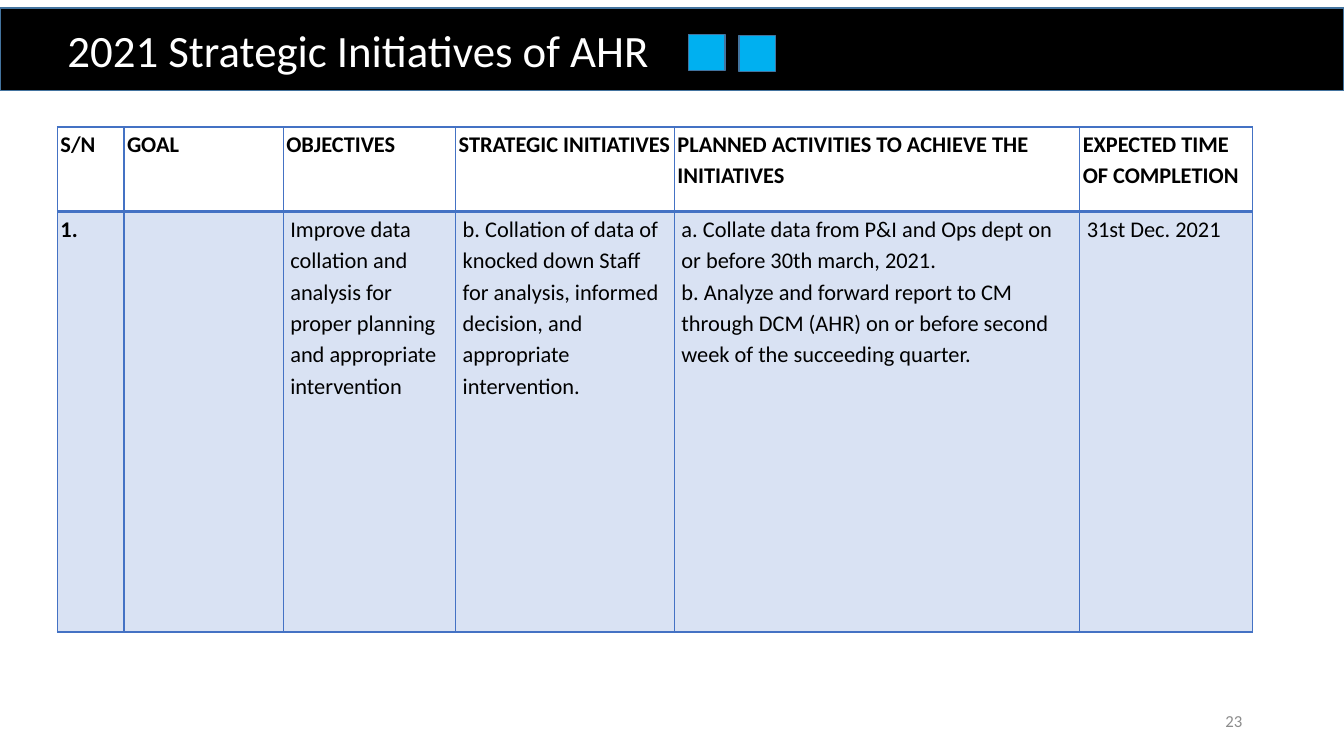
from dataclasses import dataclass

from lxml.etree import SubElement
from pptx import Presentation
from pptx.dml.color import RGBColor
from pptx.enum.shapes import MSO_SHAPE
from pptx.enum.text import MSO_ANCHOR, PP_ALIGN
from pptx.oxml.ns import qn
from pptx.util import Inches, Pt


@dataclass(frozen=True)
class Theme:
    font: str = "Calibri"
    title_size: int = 32
    table_size: int = 16
    number_size: int = 12
    black: str = "000000"
    white: str = "FFFFFF"
    grey: str = "8C8C8C"
    cyan: str = "00B0F0"
    outline: str = "43739E"
    grid: str = "4472C4"
    tint_percent: int = 20


THEME = Theme()
SLIDE_W, SLIDE_H = 13.33, 7.5
COLUMNS = [0.66, 1.58, 1.71, 2.17, 4.02, 1.71]
ROWS = [0.84, 4.17]
HEADINGS = [
    "S/N", "GOAL", "OBJECTIVES", "STRATEGIC INITIATIVES",
    "PLANNED ACTIVITIES TO ACHIEVE THE INITIATIVES",
    "EXPECTED TIME OF COMPLETION",
]
INITIATIVE = [
    "1.",
    "",
    "Improve data collation and analysis for proper planning and appropriate intervention",
    "b. Collation of data of knocked down Staff for analysis, informed decision, "
    "and appropriate intervention.",
    "a. Collate data from P&I and Ops dept on or before 30th march, 2021.\n"
    "b. Analyze and forward report to CM through DCM (AHR) on or before second "
    "week of the succeeding quarter.",
    "31st Dec. 2021",
]


def add_run(p, text, size, color, bold=False):
    r = p.add_run()
    r.text = text
    r.font.name, r.font.size, r.font.bold = THEME.font, Pt(size), bold
    r.font.color.rgb = RGBColor.from_string(color)


def add_rect(s, x, y, w, h, color):
    sp = s.shapes.add_shape(MSO_SHAPE.RECTANGLE, *map(Inches, (x, y, w, h)))
    sp.shadow.inherit = False
    sp.fill.solid()
    sp.fill.fore_color.rgb = RGBColor.from_string(color)
    sp.line.color.rgb = RGBColor.from_string(THEME.outline)
    sp.line.width = Pt(1)


def add_label(s, x, y, w, h, text, size, color, align=PP_ALIGN.LEFT):
    tf = s.shapes.add_textbox(*map(Inches, (x, y, w, h))).text_frame
    tf.word_wrap = True
    tf.vertical_anchor = MSO_ANCHOR.MIDDLE
    p = tf.paragraphs[0]
    p.alignment = align
    add_run(p, text, size, color)


def title_band(s, x, y, w, h):
    add_rect(s, x, y, w, h, THEME.black)
    add_label(s, x + 0.57, y + 0.09, w - 1.14, 0.64,
              "2021 Strategic Initiatives of AHR", THEME.title_size, THEME.white)


def title_squares(s, x, y, side):
    for i in range(2):
        add_rect(s, x + 0.5 * i, y + 0.01 * i, side, side, THEME.cyan)


def set_borders(cell, bottom):
    tc_pr = cell._tc.get_or_add_tcPr()
    for edge, width in zip("LRTB", (1, 1, 1, bottom)):
        ln = SubElement(tc_pr, qn(f"a:ln{edge}"), w=str(Pt(width)))
        fill = SubElement(ln, qn("a:solidFill"))
        SubElement(fill, qn("a:srgbClr"), val=THEME.grid)


def tint(cell):
    cell.fill.solid()
    cell.fill.fore_color.rgb = RGBColor.from_string(THEME.grid)
    color = cell._tc.tcPr.find(qn("a:solidFill")).find(qn("a:srgbClr"))
    SubElement(color, qn("a:alpha"), val=str(THEME.tint_percent * 1000))


def fill_cell(cell, text, heading, bold):
    cell.margin_left = cell.margin_right = Inches(0.03 if bold else 0.07)
    cell.margin_top = cell.margin_bottom = 0
    set_borders(cell, bottom=2 if heading else 1)
    if heading:
        cell.fill.background()
    else:
        tint(cell)
    tf = cell.text_frame
    for i, line in enumerate(text.split("\n") if text else []):
        p = tf.add_paragraph() if i else tf.paragraphs[0]
        p.line_spacing = 1.15
        add_run(p, line, THEME.table_size, THEME.black, bold)


def initiatives_table(s, x, y):
    table = s.shapes.add_table(
        len(ROWS), len(COLUMNS),
        *map(Inches, (x, y, sum(COLUMNS), sum(ROWS)))).table
    table.first_row = table.horz_banding = False
    for column, width in zip(table.columns, COLUMNS):
        column.width = Inches(width)
    for row, height in zip(table.rows, ROWS):
        row.height = Inches(height)
    for i, texts in enumerate((HEADINGS, INITIATIVE)):
        for j, text in enumerate(texts):
            fill_cell(table.cell(i, j), text, heading=i == 0, bold=i == 0 or j == 0)


def main():
    prs = Presentation()
    prs.slide_width, prs.slide_height = Inches(SLIDE_W), Inches(SLIDE_H)
    s = prs.slides.add_slide(prs.slide_layouts[6])
    title_band(s, 0, 0.08, SLIDE_W, 0.82)
    initiatives_table(s, 0.57, 1.26)
    title_squares(s, 6.83, 0.34, 0.36)
    add_label(s, 9.42, 6.95, 3, 0.4, "23", THEME.number_size, THEME.grey, PP_ALIGN.RIGHT)
    prs.save("out.pptx")


if __name__ == "__main__":
    main()
